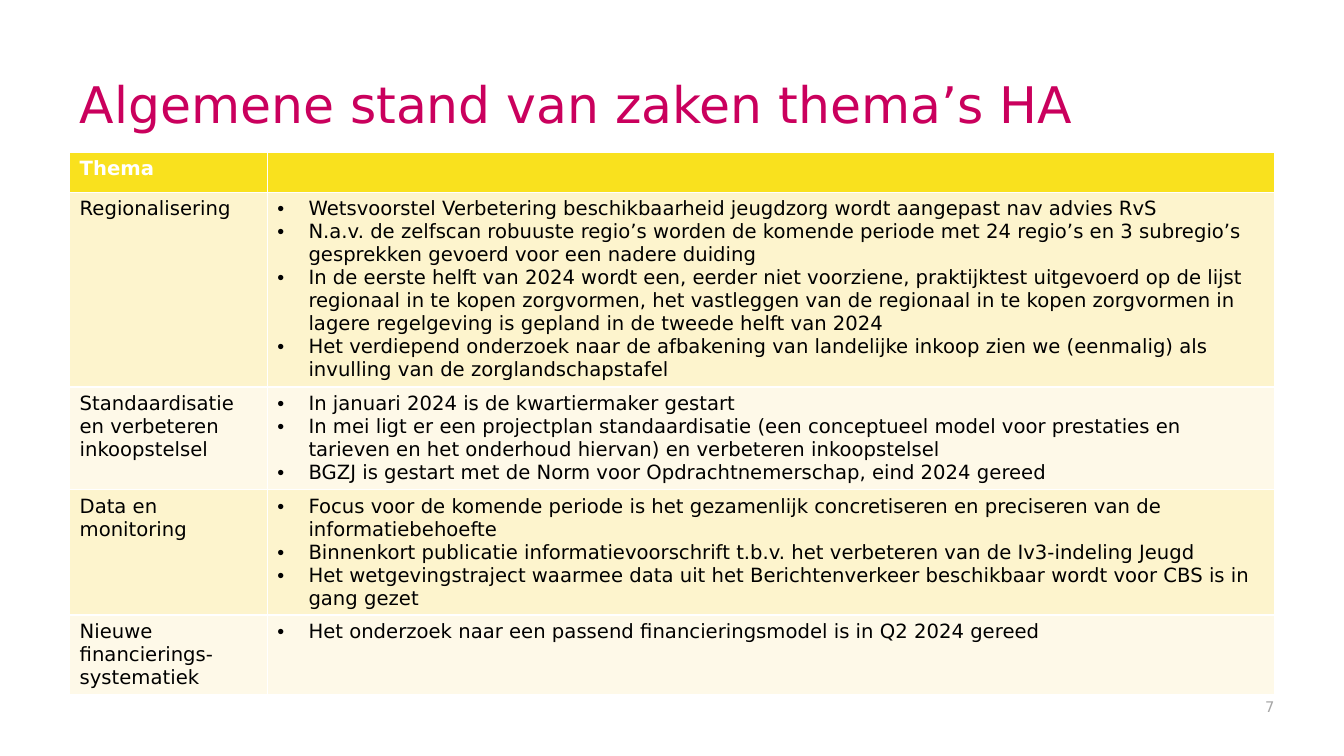
"""Builds the slide with the state of affairs per theme."""
from lxml import etree
from pptx import Presentation
from pptx import util as u
from pptx.dml.color import RGBColor
from pptx.enum import text
from pptx.oxml.ns import qn

FONT = "DejaVu Sans"
HUES = {"title": "CA005D", "head": "F9E11E", "odd": "FDF4CD", "even": "FEF9E8",
        "white": "FFFFFF", "black": "000000", "gray": "A6A6A6"}
COLS = [1.96, 9.99]
HEAD = 0.4
THEMES = [
    ("Regionalisering", 1.93, [
        "Wetsvoorstel Verbetering beschikbaarheid jeugdzorg wordt aangepast nav advies RvS",
        "N.a.v. de zelfscan robuuste regio’s worden de komende periode met 24 regio’s "
        "en 3 subregio’s gesprekken gevoerd voor een nadere duiding",
        "In de eerste helft van 2024 wordt een, eerder niet voorziene, praktijktest "
        "uitgevoerd op de lijst regionaal in te kopen zorgvormen, het vastleggen van de "
        "regionaal in te kopen zorgvormen in lagere regelgeving is gepland in de tweede "
        "helft van 2024",
        "Het verdiepend onderzoek naar de afbakening van landelijke inkoop zien we "
        "(eenmalig) als invulling van de zorglandschapstafel"]),
    ("Standaardisatie en verbeteren inkoopstelsel", 1.02, [
        "In januari 2024 is de kwartiermaker gestart",
        "In mei ligt er een projectplan standaardisatie (een conceptueel model voor "
        "prestaties en tarieven en het onderhoud hiervan) en verbeteren inkoopstelsel",
        "BGZJ is gestart met de Norm voor Opdrachtnemerschap, eind 2024 gereed"]),
    ("Data en monitoring", 1.24, [
        "Focus voor de komende periode is het gezamenlijk concretiseren en preciseren "
        "van de informatiebehoefte",
        "Binnenkort publicatie informatievoorschrift t.b.v. het verbeteren van de "
        "Iv3-indeling Jeugd",
        "Het wetgevingstraject waarmee data uit het Berichtenverkeer beschikbaar wordt "
        "voor CBS is in gang gezet"]),
    ("Nieuwe financierings-systematiek", 0.78, [
        "Het onderzoek naar een passend financieringsmodel is in Q2 2024 gereed"]),
]


def hue(name):
    return RGBColor.from_string(HUES[name])


def write(frame, lines, size=14, color="black", bold=False, align=None,
          space=None, bullet=False):
    for i, line in enumerate(lines):
        para = frame.paragraphs[0] if i == 0 else frame.add_paragraph()
        if bullet:
            props = para._p.get_or_add_pPr()
            props.set("marL", str(u.Inches(0.31)))
            props.set("indent", str(u.Inches(-0.31)))
            etree.SubElement(props, qn("a:buFont"), typeface="Arial")
            etree.SubElement(props, qn("a:buChar"), char="•")
        if align is not None:
            para.alignment = align
        if space:
            para.line_spacing = space
        run = para.add_run()
        run.text = line
        run.font.name = FONT
        run.font.size = u.Pt(size)
        run.font.bold = bold
        run.font.color.rgb = hue(color)


def place(shape, left, top, width, height):
    shape.left, shape.top = u.Inches(left), u.Inches(top)
    shape.width, shape.height = u.Inches(width), u.Inches(height)


def add_title(slide, line):
    title = slide.shapes.title
    place(title, 0.69, 0.34, 11.95, 1.04)
    frame = title.text_frame
    frame.vertical_anchor = text.MSO_ANCHOR.BOTTOM
    frame.auto_size = text.MSO_AUTO_SIZE.NONE
    write(frame, [line], size=36, color="title", align=text.PP_ALIGN.LEFT, space=0.9)


def paint(cell, color):
    cell.fill.solid()
    cell.fill.fore_color.rgb = hue(color)


def add_themes(slide):
    highs = [HEAD] + [high for _, high, _ in THEMES]
    box = [u.Inches(n) for n in (0.69, 1.51, sum(COLS), sum(highs))]
    table = slide.shapes.add_table(len(highs), len(COLS), *box).table
    for col, width in zip(table.columns, COLS):
        col.width = u.Inches(width)
    for row, high in zip(table.rows, highs):
        row.height = u.Inches(high)
    for cell in table.rows[0].cells:
        paint(cell, "head")
    write(table.cell(0, 0).text_frame, ["Thema"], color="white", bold=True)
    table.cell(0, 1).text_frame.paragraphs[0].font.size = u.Pt(14)
    for i, (theme, _, points) in enumerate(THEMES, 1):
        name, list_cell = table.rows[i].cells
        for cell in (name, list_cell):
            paint(cell, "odd" if i % 2 else "even")
        write(name.text_frame, [theme])
        write(list_cell.text_frame, points, bullet=True)


def add_number(slide, number):
    box = slide.shapes.add_textbox(0, 0, 0, 0)
    place(box, 7.17, 6.8, 5.47, 0.35)
    frame = box.text_frame
    frame.word_wrap = True
    frame.margin_right = 0
    frame.vertical_anchor = text.MSO_ANCHOR.BOTTOM
    write(frame, [number], size=10.5, color="gray", align=text.PP_ALIGN.RIGHT)


def main():
    deck = Presentation()
    deck.slide_width, deck.slide_height = u.Inches(13.33), u.Inches(7.5)
    slide = deck.slides.add_slide(deck.slide_layouts[5])
    add_themes(slide)
    add_number(slide, "7")
    add_title(slide, "Algemene stand van zaken thema’s HA")
    deck.save("out.pptx")


if __name__ == "__main__":
    main()
